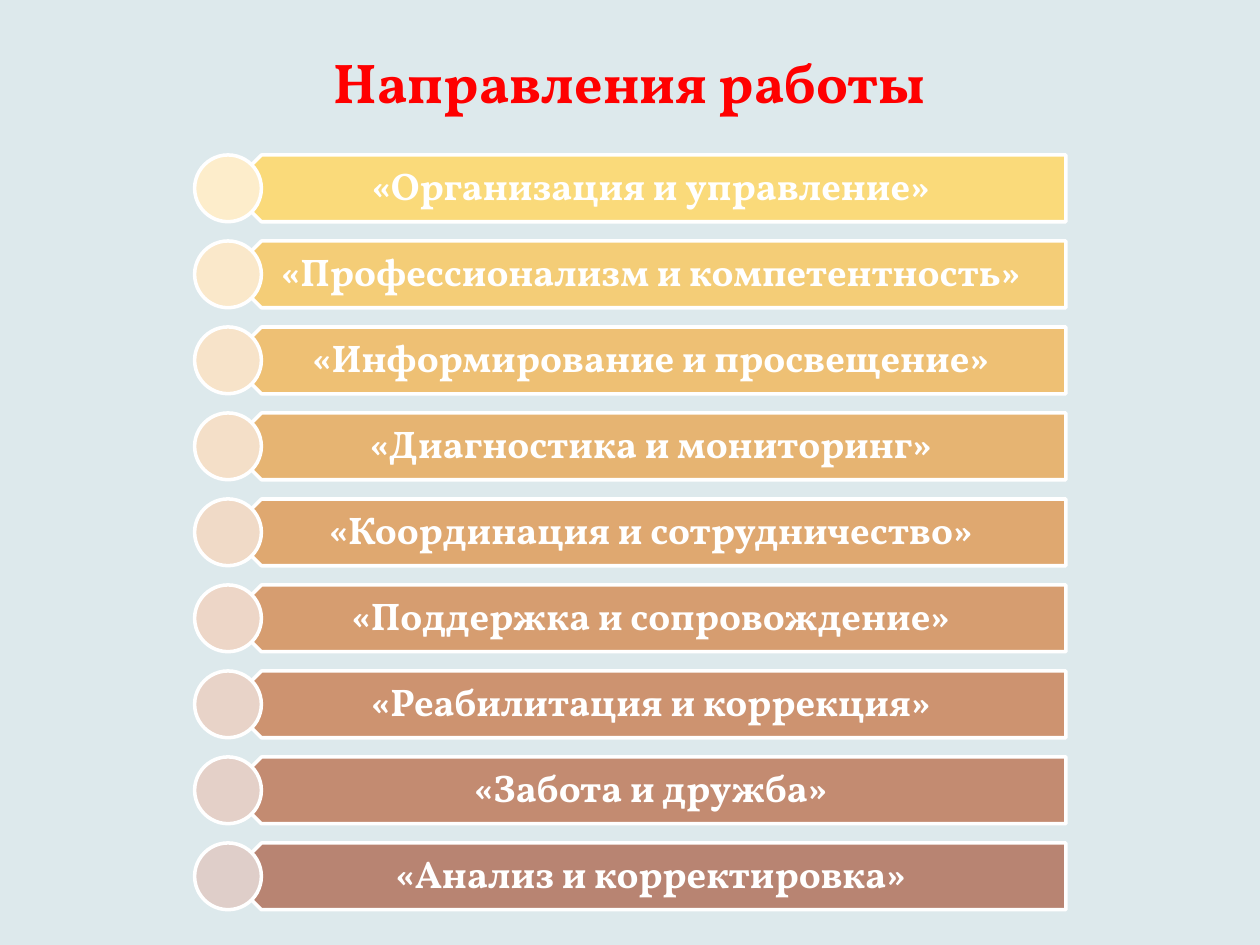
from dataclasses import dataclass

from pptx import Presentation
from pptx.dml.color import RGBColor
from pptx.enum.shapes import MSO_SHAPE
from pptx.enum.text import MSO_ANCHOR, PP_ALIGN
from pptx.util import Inches, Pt

BAR = MSO_SHAPE.PENTAGON
DOT = MSO_SHAPE.OVAL
MIDDLE = MSO_ANCHOR.MIDDLE
CENTER = PP_ALIGN.CENTER


@dataclass(frozen=True)
class Theme:
    """Colours and type sizes of the slide."""
    font: str = "Vollkorn"
    back: str = "DDE9EC"
    title: str = "FF0000"
    white: str = "FFFFFF"
    head: int = 32
    body: int = 22
    line: int = 2


THEME = Theme()
TOP, LAST = 1.23, 6.69
LEFT, WIDTH = 1.81, 6.65
SIZE = 0.53
AREAS = [
    ("«Организация и управление»", "FADA7A", "FDEDCB"),
    ("«Профессионализм и компетентность»", "F4CD77", "FAE8CA"),
    ("«Информирование и просвещение»", "EEC074", "F7E3C9"),
    ("«Диагностика и мониторинг»", "E6B472", "F4DFC8"),
    ("«Координация и сотрудничество»", "DFA870", "F0DAC7"),
    ("«Поддержка и сопровождение»", "D69D70", "EDD6C7"),
    ("«Реабилитация и коррекция»", "CD9370", "E8D3C8"),
    ("«Забота и дружба»", "C38B71", "E4D0C8"),
    ("«Анализ и корректировка»", "B88472", "DFCEC9"),
]


def add_form(slide, kind, box, fill):
    """Add a filled shape with a white outline."""
    form = slide.shapes.add_shape(kind, *map(Inches, box))
    form.shadow.inherit = False
    form.fill.solid()
    form.fill.fore_color.rgb = RGBColor.from_string(fill)
    form.line.color.rgb = RGBColor.from_string(THEME.white)
    form.line.width = Pt(THEME.line)
    return form


def add_label(slide, text, box, size, color, left=0.1, right=0.1):
    """Add a bold, centred line of text."""
    frame = slide.shapes.add_textbox(*map(Inches, box)).text_frame
    frame.word_wrap = True
    frame.vertical_anchor = MIDDLE
    frame.margin_left, frame.margin_right = Inches(left), Inches(right)
    frame.margin_top = frame.margin_bottom = Inches(0.09)
    para = frame.paragraphs[0]
    para.text = text
    para.alignment = CENTER
    para.font.name = THEME.font
    para.font.size = Pt(size)
    para.font.bold = True
    para.font.color.rgb = RGBColor.from_string(color)
    return para


def add_area(slide, top, text, fill, tint):
    """Add one row: a bar, its label and a dot."""
    box = (LEFT, top, WIDTH, SIZE)
    add_form(slide, BAR, box, fill).rotation = 180
    label = add_label(slide, text, box, THEME.body, THEME.white, 0.23, 0.17)
    label.line_spacing = 0.9
    add_form(slide, DOT, (LEFT - SIZE / 2, top, SIZE, SIZE), tint)


def main():
    """Build the slide and save it."""
    deck = Presentation()
    deck.slide_width, deck.slide_height = Inches(10), Inches(7.5)
    slide = deck.slides.add_slide(deck.slide_layouts[6])
    slide.background.fill.solid()
    slide.background.fill.fore_color.rgb = RGBColor.from_string(THEME.back)
    add_label(slide, "Направления работы", (0.5, 0.3, 9, 0.69),
              THEME.head, THEME.title)
    step = (LAST - TOP) / (len(AREAS) - 1)
    for row, area in enumerate(AREAS):
        add_area(slide, TOP + row * step, *area)
    deck.save("out.pptx")


if __name__ == "__main__":
    main()
